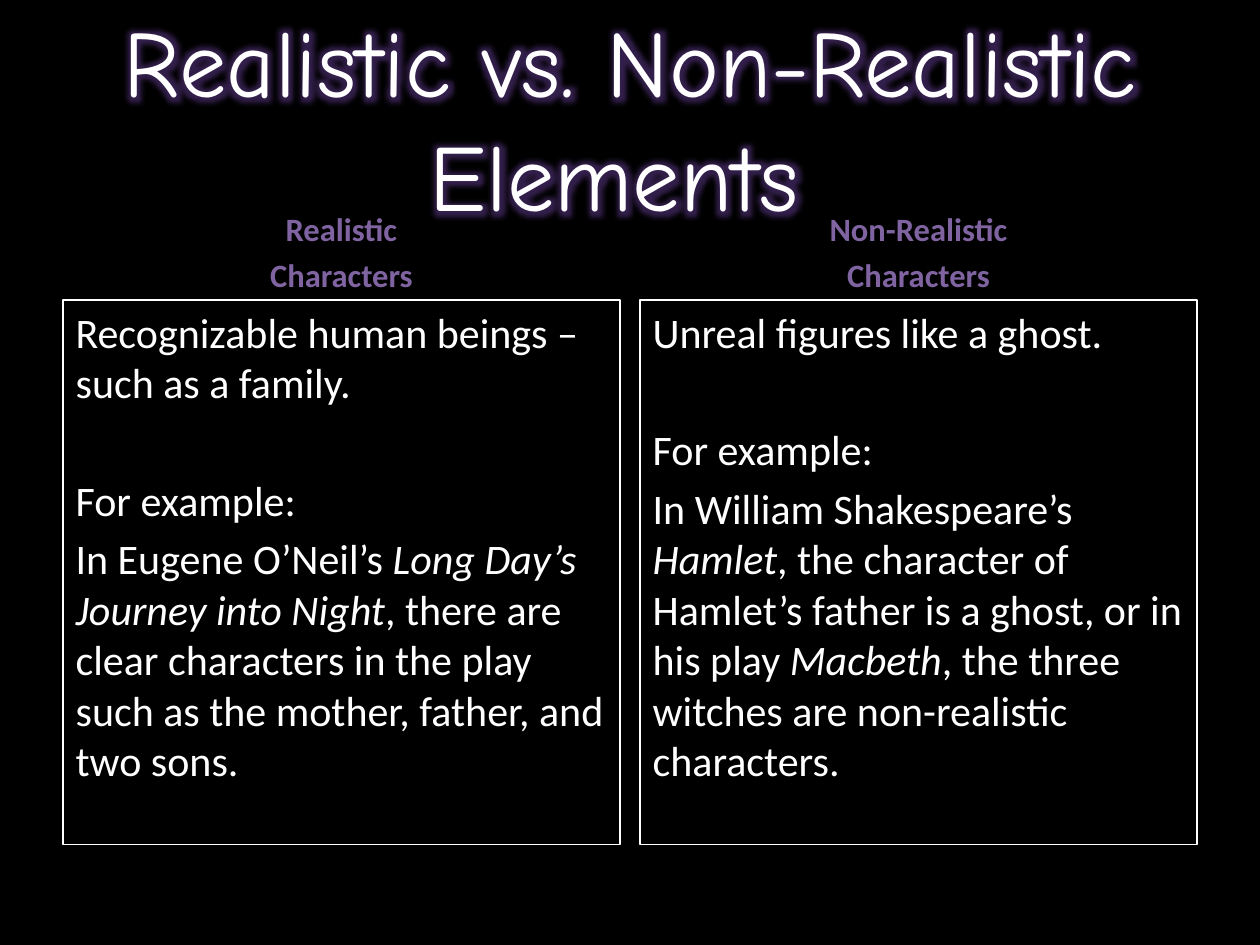
from lxml.etree import SubElement
from pptx import Presentation
from pptx.dml.color import RGBColor
from pptx.enum.text import MSO_ANCHOR, MSO_AUTO_SIZE, PP_ALIGN
from pptx.oxml import parse_xml
from pptx.oxml.ns import nsdecls, qn
from pptx.util import Inches, Pt

BLACK = RGBColor(0x00, 0x00, 0x00)
WHITE = RGBColor(0xFF, 0xFF, 0xFF)
PURPLE = RGBColor(0x80, 0x64, 0xA2)

TITLE = "Realistic vs. Non-Realistic Elements "
COLUMNS = [
    {
        "heading": ["Realistic", "Characters"],
        "intro": "Recognizable human beings – such as a family.",
        "example": [
            ("In Eugene O’Neil’s ", False),
            ("Long Day’s Journey into Night", True),
            (", there are clear characters in the play such as the mother, "
             "father, and two sons.", False),
        ],
    },
    {
        "heading": ["Non-Realistic", "Characters"],
        "intro": "Unreal figures like a ghost.",
        "example": [
            ("In William Shakespeare’s ", False),
            ("Hamlet", True),
            (", the character of Hamlet’s father is a ghost, or in his play ", False),
            ("Macbeth", True),
            (", the three witches are non-realistic characters.", False),
        ],
    },
]

MARGIN, COL_W, GAP = 0.5, 4.42, 0.16
HEAD_TOP, HEAD_H, BODY_H = 1.68, 0.7, 4.32
TITLE_FONT = {"name": "Comic Neue", "size": Pt(54), "bold": False}
HEAD_FONT = {"name": "Calibri", "size": Pt(18.6), "bold": True}
BODY_FONT = {"name": "Calibri", "size": Pt(24), "bold": False}
GLOW = (
    f'<a:effectLst {nsdecls("a")}><a:glow rad="139700"><a:srgbClr val="8064A2">'
    '<a:satMod val="175000"/><a:alpha val="40000"/>'
    '</a:srgbClr></a:glow></a:effectLst>'
)


def fill_text(sp, box, paragraphs, font, color, anchor, align):
    sp.left, sp.top, sp.width, sp.height = (Inches(v) for v in box)
    tf = sp.text_frame
    tf.word_wrap = True
    tf.auto_size = MSO_AUTO_SIZE.NONE
    tf.vertical_anchor = anchor
    for i, (space, runs) in enumerate(paragraphs):
        p = tf.paragraphs[0] if i == 0 else tf.add_paragraph()
        p.alignment = align
        p.space_before = Pt(space)
        pPr = p._p.get_or_add_pPr()
        pPr.set("marL", "0")
        pPr.set("indent", "0")
        SubElement(pPr, qn("a:buNone"))
        for text, italic in runs:
            r = p.add_run()
            r.text = text
            for name, value in font.items():
                setattr(r.font, name, value)
            r.font.italic = italic
            r.font.color.rgb = color


prs = Presentation()
prs.slide_width, prs.slide_height = Inches(10), Inches(7.5)
s = prs.slides.add_slide(prs.slide_layouts.get_by_name("Comparison"))
s.background.fill.solid()
s.background.fill.fore_color.rgb = BLACK

for i, col in enumerate(COLUMNS):
    left = MARGIN + i * (COL_W + GAP)
    head, body = s.placeholders[1 + 2 * i], s.placeholders[2 + 2 * i]
    fill_text(head, (left, HEAD_TOP, COL_W, HEAD_H),
              [(3.7, [(line, False)]) for line in col["heading"]],
              HEAD_FONT, PURPLE, MSO_ANCHOR.BOTTOM, PP_ALIGN.CENTER)
    fill_text(body, (left, HEAD_TOP + HEAD_H, COL_W, BODY_H),
              [(4.8, [(col["intro"], False)]),
               (38.4, [("For example:", False)]),
               (4.8, col["example"])],
              BODY_FONT, WHITE, MSO_ANCHOR.TOP, PP_ALIGN.LEFT)
    body.line.color.rgb = WHITE
    body.line.width = Pt(0.75)

title = s.shapes.title
fill_text(title, (MARGIN, 0.3, 9, 1.25), [(0, [(TITLE, False)])],
          TITLE_FONT, WHITE, MSO_ANCHOR.MIDDLE, PP_ALIGN.CENTER)
rPr = title.text_frame.paragraphs[0].runs[0]._r.get_or_add_rPr()
rPr.find(qn("a:solidFill")).addnext(parse_xml(GLOW))
s.shapes._spTree.append(title._element)

prs.save("out.pptx")
